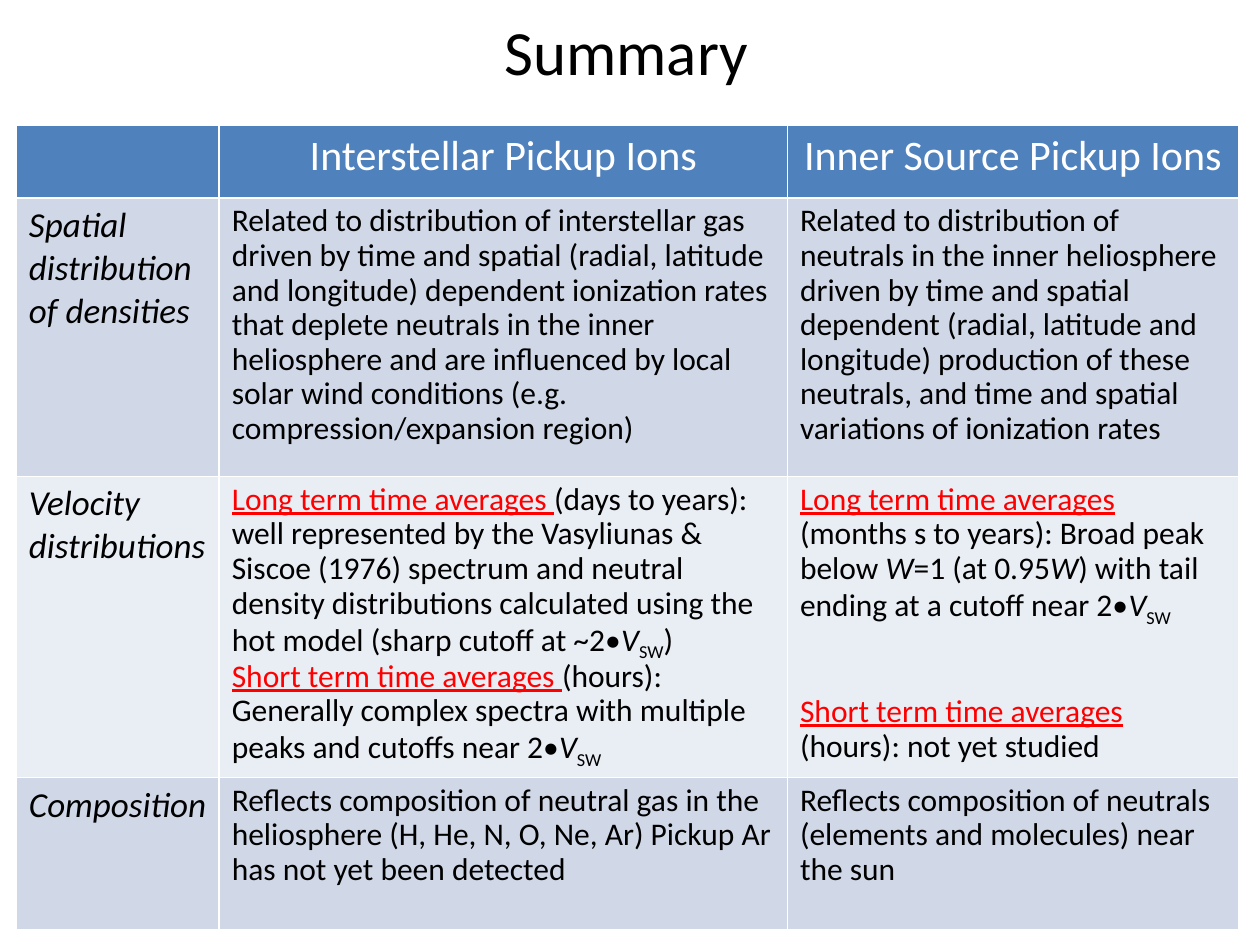
from dataclasses import dataclass

from lxml.etree import SubElement
from pptx import Presentation
from pptx.dml.color import RGBColor
from pptx.enum.text import MSO_AUTO_SIZE, PP_ALIGN
from pptx.oxml.ns import qn
from pptx.util import Inches, Pt

FONT = "Calibri"
BLACK, WHITE, RED = "000000", "FFFFFF", "FF0000"
HEADER_FILL, BAND_FILLS = "4F81BD", ("D0D8E8", "E9EDF4")
COLUMN_WIDTHS = (1.61, 4.51, 3.58)
ROW_HEIGHTS = (0.58, 2.21, 2.39, 1.21)


@dataclass(frozen=True)
class Span:
    text: str
    size: float = 18
    color: str = BLACK
    italic: bool = False
    underline: bool = False
    subscript: bool = False


@dataclass(frozen=True)
class Para:
    spans: tuple[Span, ...]
    line_spacing: float = 0.9
    space_before: float = 0
    align: PP_ALIGN = PP_ALIGN.LEFT


def rgb(color: str) -> RGBColor:
    return RGBColor.from_string(color)


def heading(text: str) -> tuple[Para, ...]:
    return (Para((Span(text, 24, WHITE),), 1, align=PP_ALIGN.CENTER),)


def topic(text: str) -> tuple[Para, ...]:
    return (Para((Span(text, 20, italic=True),), 1),)


def body(*spans: Span, space_before: float = 0) -> Para:
    return Para(spans, space_before=space_before)


def averages(term: str) -> Span:
    return Span(f"{term} term time averages ", color=RED, underline=True)


def symbol(letter: str) -> Span:
    return Span(letter, italic=True)


SOLAR_WIND_SPEED = (symbol("V"), Span("SW", subscript=True))

ROWS = (
    ((), heading("Interstellar Pickup Ions"), heading("Inner Source Pickup Ions")),
    (
        topic("Spatial distribution of densities"),
        (body(Span(
            "Related to distribution of interstellar gas driven by time and spatial "
            "(radial, latitude and longitude) dependent ionization rates that deplete "
            "neutrals in the inner heliosphere and are influenced by local solar wind "
            "conditions (e.g. compression/expansion region)")),),
        (body(Span(
            "Related to distribution of neutrals in the inner heliosphere driven by "
            "time and spatial dependent (radial, latitude and longitude) production of "
            "these neutrals, and time and spatial variations of ionization rates")),),
    ),
    (
        topic("Velocity distributions"),
        (
            body(averages("Long"), Span(
                "(days to years): well represented by the Vasyliunas & Siscoe (1976) "
                "spectrum and neutral density distributions calculated using the hot "
                "model (sharp cutoff at ~2•"), *SOLAR_WIND_SPEED, Span(")")),
            body(averages("Short"), Span(
                "(hours): Generally complex spectra with multiple peaks and cutoffs "
                "near 2•"), *SOLAR_WIND_SPEED),
        ),
        (
            body(averages("Long"), Span("(months s to years): Broad peak below "),
                 symbol("W"), Span("=1 (at 0.95"), symbol("W"),
                 Span(") with tail ending at a cutoff near 2•"), *SOLAR_WIND_SPEED),
            body(averages("Short"), Span("(hours): not yet studied"), space_before=40),
        ),
    ),
    (
        topic("Composition"),
        (body(Span(
            "Reflects composition of neutral gas in the heliosphere (H, He, N, O, Ne, "
            "Ar) Pickup Ar has not yet been detected")),),
        (body(Span(
            "Reflects composition of neutrals (elements and molecules) near the sun")),),
    ),
)


def write(frame, paras: tuple[Para, ...]) -> None:
    for index, para in enumerate(paras):
        paragraph = frame.add_paragraph() if index else frame.paragraphs[0]
        paragraph.alignment = para.align
        paragraph.line_spacing = para.line_spacing
        paragraph.space_before = Pt(para.space_before)
        for span in para.spans:
            run = paragraph.add_run()
            run.text = span.text
            font = run.font
            font.name, font.size, font.bold = FONT, Pt(span.size), False
            font.italic, font.underline = span.italic, span.underline
            font.color.rgb = rgb(span.color)
            if span.subscript:
                run._r.get_or_add_rPr().set("baseline", "-25000")


def style_cell(cell, fill: str) -> None:
    """Give the cell thin white borders and a solid fill."""
    properties = cell._tc.get_or_add_tcPr()
    for side in ("a:lnL", "a:lnR", "a:lnT", "a:lnB"):
        line = SubElement(properties, qn(side), w=str(Pt(1)))
        SubElement(SubElement(line, qn("a:solidFill")), qn("a:srgbClr"), val=WHITE)
    cell.fill.solid()
    cell.fill.fore_color.rgb = rgb(fill)


def add_title(slide) -> None:
    title = slide.shapes.add_textbox(Inches(1), Inches(0.05), Inches(7.94), Inches(0.71))
    frame = title.text_frame
    frame.word_wrap = True
    frame.auto_size = MSO_AUTO_SIZE.SHAPE_TO_FIT_TEXT
    write(frame, (Para((Span("Summary", 36),), 1, align=PP_ALIGN.CENTER),))


def add_comparison(slide) -> None:
    table = slide.shapes.add_table(
        len(ROWS), len(COLUMN_WIDTHS), Inches(0.13), Inches(0.99),
        Inches(sum(COLUMN_WIDTHS)), Inches(sum(ROW_HEIGHTS))).table
    table.first_row = table.horz_banding = False
    for column, width in zip(table.columns, COLUMN_WIDTHS):
        column.width = Inches(width)
    for r, (height, contents) in enumerate(zip(ROW_HEIGHTS, ROWS)):
        table.rows[r].height = Inches(height)
        fill = BAND_FILLS[(r - 1) % 2] if r else HEADER_FILL
        for c, paras in enumerate(contents):
            cell = table.cell(r, c)
            style_cell(cell, fill)
            write(cell.text_frame, paras)


def main() -> None:
    deck = Presentation()
    deck.slide_width, deck.slide_height = Inches(10), Inches(7.5)
    slide = deck.slides.add_slide(deck.slide_layouts[6])
    add_comparison(slide)
    add_title(slide)
    deck.save("out.pptx")


if __name__ == "__main__":
    main()
